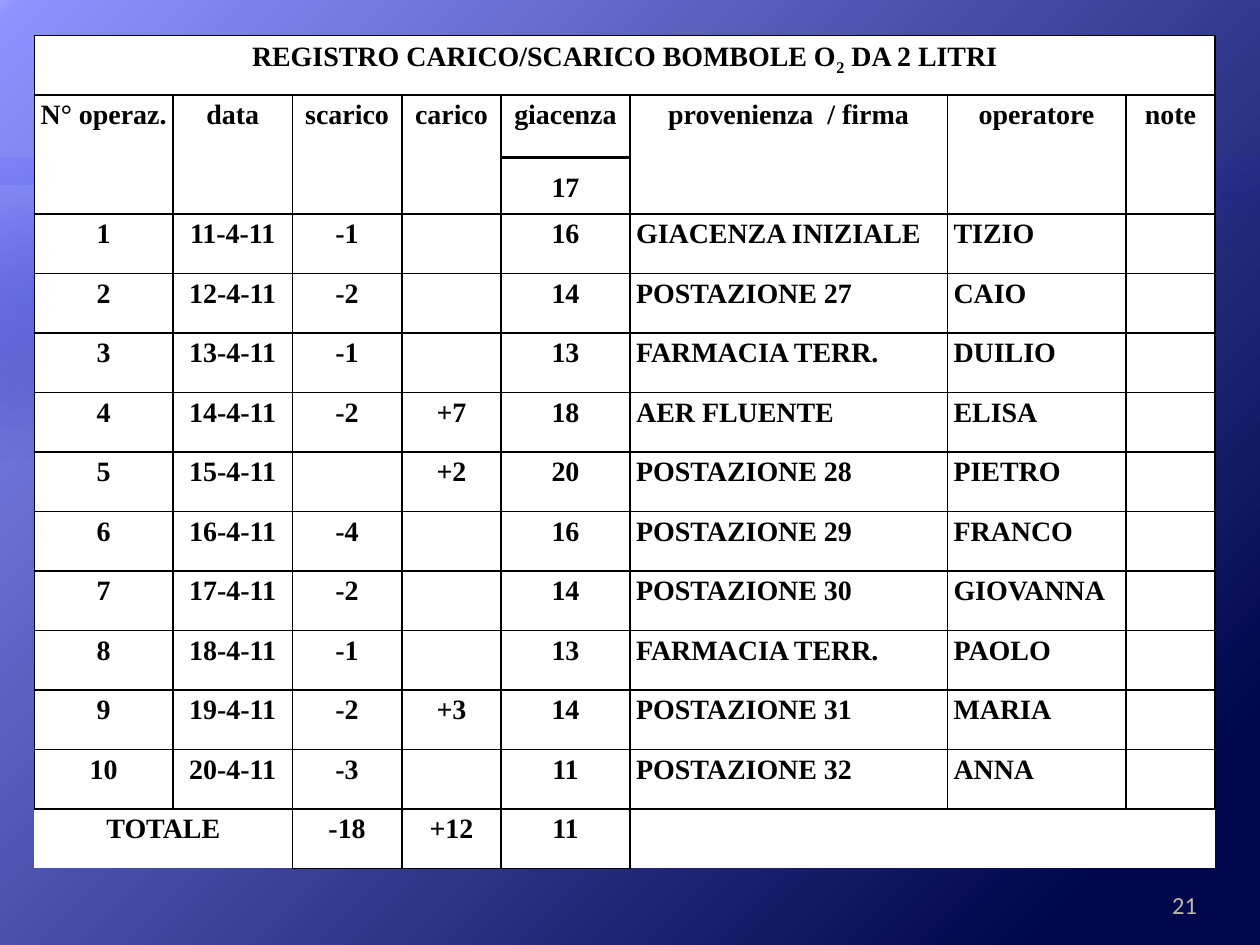
import dataclasses
import typing

import pptx
import pptx.dml.color
import pptx.enum.shapes
import pptx.enum.text
import pptx.oxml
import pptx.oxml.ns
import pptx.presentation
import pptx.slide
import pptx.table
import pptx.util

Pt = pptx.util.Pt
RGB = pptx.dml.color.RGBColor
ALIGN = pptx.enum.text.PP_ALIGN
NS = pptx.oxml.ns.nsdecls("a", "p")


@dataclasses.dataclass(frozen=True)
class Theme:
    ink: str = "000000"
    paper: str = "FFFFFF"
    number: str = "BDB8A9"
    register_font: str = "Times New Roman"
    number_font: str = "Calibri"
    register_size: float = 16
    number_size: float = 14


THEME = Theme()


class Stop(typing.NamedTuple):
    position: int
    color: str
    alpha: int = 100


class Wave(typing.NamedTuple):
    top: float
    height: float
    start: float
    control: tuple[float, float]
    end: float
    glow: Stop


class Column(typing.NamedTuple):
    heading: str
    width: float
    align: typing.Any = ALIGN.CENTER


SLIDE_WIDTH, SLIDE_HEIGHT = 720, 540
LEFT, TOP = 19.6, 20.4
ROW_HEIGHT, HEADING_HEIGHT = 34, 68
OPENING_STOCK_GAP = 21.15
BACKDROP = [Stop(0, "9BA0FF"), Stop(1, "8D92FF"), Stop(90, "00064B")]
WAVE_FADE = Stop(65, "000D9E", 0)
WAVES = [
    Wave(90, 438, 153.5, (384.5, 3.5), 90, Stop(100, "797FFF", 55)),
    Wave(106, 353, 153.5, (430.5, 22.5), 106, Stop(100, "A3A7FF", 30)),
]
COLUMNS = [
    Column("N° operaz.", 79.3),
    Column("data", 68.2),
    Column("scarico", 62.6),
    Column("carico", 56.7),
    Column("giacenza", 73.6),
    Column("provenienza  / firma", 181.4, ALIGN.LEFT),
    Column("operatore", 102, ALIGN.LEFT),
    Column("note", 51),
]
STOCK = 4
OPERATIONS = [
    ("-1", "", "16", "GIACENZA INIZIALE", "TIZIO"),
    ("-2", "", "14", "POSTAZIONE 27", "CAIO"),
    ("-1", "", "13", "FARMACIA TERR.", "DUILIO"),
    ("-2", "+7", "18", "AER FLUENTE", "ELISA"),
    ("", "+2", "20", "POSTAZIONE 28", "PIETRO"),
    ("-4", "", "16", "POSTAZIONE 29", "FRANCO"),
    ("-2", "", "14", "POSTAZIONE 30", "GIOVANNA"),
    ("-1", "", "13", "FARMACIA TERR.", "PAOLO"),
    ("-2", "+3", "14", "POSTAZIONE 31", "MARIA"),
    ("-3", "", "11", "POSTAZIONE 32", "ANNA"),
]
TOTALS = ("TOTALE", "", "-18", "+12", "11", "", "", "")
TOTAL_EDGES = ["RT", "RT", "LRTB", "LRTB", "LRTB", "LT", "T", "T"]


def apply(target: typing.Any, values: dict[str, typing.Any]) -> None:
    for name, value in values.items():
        setattr(target, name, value)


def gradient(stops: list[Stop], direction: str) -> str:
    marks = "".join(
        f'<a:gs pos="{stop.position * 1000}"><a:srgbClr val="{stop.color}">'
        f'<a:alpha val="{stop.alpha * 1000}"/></a:srgbClr></a:gs>'
        for stop in stops
    )
    return f'<a:gradFill {NS} rotWithShape="1"><a:gsLst>{marks}</a:gsLst>{direction}</a:gradFill>'


def paint_backdrop(slide: pptx.slide.Slide) -> None:
    focus = '<a:path path="circle"><a:fillToRect l="0" t="0" r="210000" b="300000"/></a:path>'
    fill = gradient(BACKDROP, focus)
    backdrop = f"<p:bg {NS}><p:bgPr>{fill}<a:effectLst/></p:bgPr></p:bg>"
    slide.element.cSld.insert(0, pptx.oxml.parse_xml(backdrop))


def draw_wave(slide: pptx.slide.Slide, wave: Wave, steps: int = 40) -> None:
    knots = [(0, wave.start), (360, wave.start), wave.control, (SLIDE_WIDTH, wave.end)]
    crest = []
    for step in range(steps + 1):
        t = step / steps
        weights = ((1 - t) ** 3, 3 * t * (1 - t) ** 2, 3 * t * t * (1 - t), t**3)
        crest.append(tuple(sum(w * knot[axis] for w, knot in zip(weights, knots)) for axis in (0, 1)))
    lowest = min(y for _, y in crest)
    outline = slide.shapes.build_freeform(SLIDE_WIDTH, wave.height, scale=Pt(1))
    outline.add_line_segments([(0, wave.height), *crest], close=True)
    swell = outline.convert_to_shape(0, Pt(wave.top - lowest))
    apply(swell, {"top": Pt(wave.top), "rotation": 180})
    swell.shadow.inherit = False
    swell.line.fill.background()
    swell.fill.background()
    properties = swell.element.spPr
    empty_fill = properties.find(pptx.oxml.ns.qn("a:noFill"))
    blend = gradient([WAVE_FADE, wave.glow], '<a:lin ang="4800000" scaled="0"/>')
    properties.replace(empty_fill, pptx.oxml.parse_xml(blend))


def write(paragraph: typing.Any, text: str, align: typing.Any, space_after: float = 0) -> None:
    apply(paragraph, {"alignment": align, "line_spacing": 1.15, "space_after": Pt(space_after)})
    add_run(paragraph, text)


def add_run(paragraph: typing.Any, text: str) -> typing.Any:
    run = paragraph.add_run()
    run.text = text
    apply(run.font, {"name": THEME.register_font, "size": Pt(THEME.register_size), "bold": True})
    run.font.color.rgb = RGB.from_string(THEME.ink)
    return run


def format_cell(cell: typing.Any, edges: str) -> None:
    apply(cell, {"margin_left": Pt(3.6), "margin_right": Pt(3.6), "margin_top": 0, "margin_bottom": 0})
    cell.fill.solid()
    cell.fill.fore_color.rgb = RGB.from_string(THEME.paper)
    ink = f'<a:solidFill><a:srgbClr val="{THEME.ink}"/></a:solidFill>'
    properties = cell._tc.get_or_add_tcPr()
    for index, edge in enumerate("LRTB"):
        stroke = ink if edge in edges else "<a:noFill/>"
        border = f'<a:ln{edge} {NS} w="12700">{stroke}</a:ln{edge}>'
        properties.insert(index, pptx.oxml.parse_xml(border))


def fill_row(register: pptx.table.Table, row: int, texts: typing.Sequence[str],
             aligns: typing.Sequence[typing.Any], space_after: float = 0) -> None:
    for column, (text, align) in enumerate(zip(texts, aligns)):
        if text:
            write(register.cell(row, column).text_frame.paragraphs[0], text, align, space_after)


def draw_register(slide: pptx.slide.Slide) -> None:
    heights = [ROW_HEIGHT, HEADING_HEIGHT] + [ROW_HEIGHT] * (len(OPERATIONS) + 1)
    widths = [column.width for column in COLUMNS]
    frame = slide.shapes.add_table(len(heights), len(widths), Pt(LEFT), Pt(TOP), Pt(sum(widths)), Pt(sum(heights)))
    register = frame.table
    apply(register, {"first_row": False, "horz_banding": False})
    for column, width in zip(register.columns, widths):
        column.width = Pt(width)
    last = len(heights) - 1
    for index, (row, height) in enumerate(zip(register.rows, heights)):
        row.height = Pt(height)
        for cell, total_edges in zip(row.cells, TOTAL_EDGES):
            format_cell(cell, total_edges if index == last else "LRTB")
    register.cell(0, 0).merge(register.cell(0, len(widths) - 1))
    register.cell(last, 0).merge(register.cell(last, 1))

    title = register.cell(0, 0).text_frame.paragraphs[0]
    write(title, "REGISTRO CARICO/SCARICO BOMBOLE O", ALIGN.CENTER)
    add_run(title, "2").font._element.set("baseline", "-25000")
    add_run(title, " DA 2 LITRI")

    centered = [ALIGN.CENTER] * len(COLUMNS)
    fill_row(register, 1, [column.heading for column in COLUMNS], centered)
    opening_stock = register.cell(1, STOCK).text_frame.add_paragraph()
    write(opening_stock, "17", ALIGN.CENTER)
    opening_stock.space_before = Pt(OPENING_STOCK_GAP)
    for number, operation in enumerate(OPERATIONS, 1):
        texts = (str(number), f"{number + 10}-4-11", *operation)
        fill_row(register, number + 1, texts, [column.align for column in COLUMNS], 10)
    fill_row(register, last, TOTALS, centered)

    start = LEFT + sum(widths[:STOCK])
    divider = slide.shapes.add_connector(
        pptx.enum.shapes.MSO_CONNECTOR.STRAIGHT, Pt(start), Pt(90), Pt(start + widths[STOCK]), Pt(90))
    divider.line.width = Pt(1.25)
    divider.line.color.rgb = RGB.from_string(THEME.ink)
    divider.element.spPr.append(pptx.oxml.parse_xml(f"<a:effectLst {NS}/>"))


def draw_page_number(slide: pptx.slide.Slide) -> None:
    page = slide.shapes.add_textbox(Pt(642), Pt(500.4), Pt(42), Pt(28.8)).text_frame
    apply(page, {"word_wrap": True, "margin_right": 0,
                 "vertical_anchor": pptx.enum.text.MSO_ANCHOR.BOTTOM})
    paragraph = page.paragraphs[0]
    paragraph.alignment = ALIGN.RIGHT
    run = paragraph.add_run()
    run.text = "21"
    apply(run.font, {"name": THEME.number_font, "size": Pt(THEME.number_size)})
    run.font.color.rgb = RGB.from_string(THEME.number)


def main() -> None:
    deck = pptx.Presentation()
    apply(deck, {"slide_width": Pt(SLIDE_WIDTH), "slide_height": Pt(SLIDE_HEIGHT)})
    slide = deck.slides.add_slide(deck.slide_layouts[6])
    paint_backdrop(slide)
    for wave in WAVES:
        draw_wave(slide, wave)
    draw_page_number(slide)
    draw_register(slide)
    deck.save("out.pptx")


if __name__ == "__main__":
    main()
